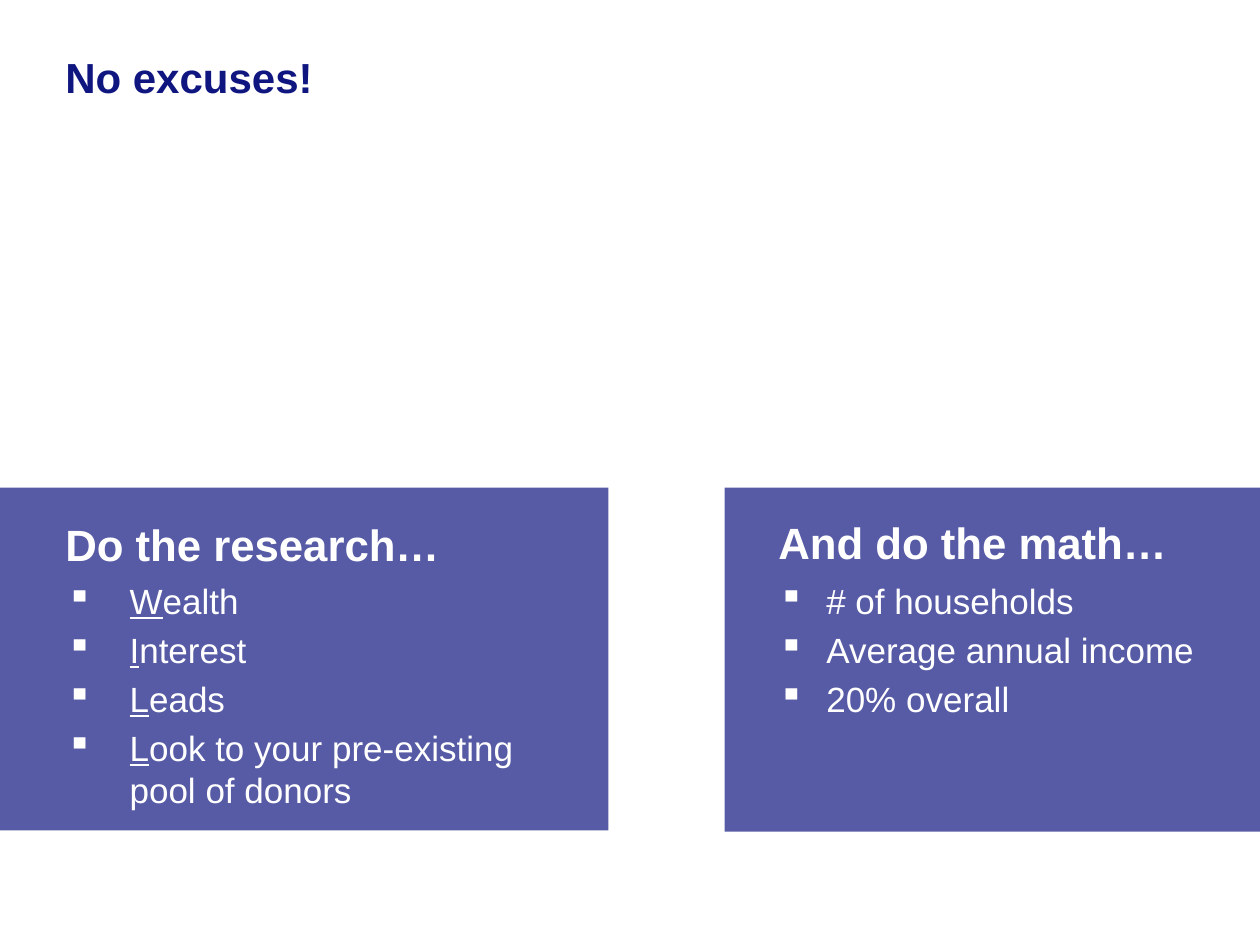
from lxml import etree
from pptx import Presentation
from pptx.dml.color import RGBColor
from pptx.enum.shapes import MSO_SHAPE
from pptx.enum.text import MSO_ANCHOR
from pptx.oxml.ns import qn
from pptx.util import Inches, Pt

RECT = MSO_SHAPE.RECTANGLE
TOP = MSO_ANCHOR.TOP
MIDDLE = MSO_ANCHOR.MIDDLE
NAVY = "10167F"
WHITE = "FFFFFF"


def tint(code):
    return RGBColor.from_string(code)


class Deck:
    font = "Arial"
    mark = "▪"

    def __init__(self, show):
        self.slide = show.slides.add_slide(show.slide_layouts[6])

    def panel(self, left, top, width, height):
        shape = self.slide.shapes.add_shape(
            RECT, Inches(left), Inches(top), Inches(width), Inches(height))
        shape.shadow.inherit = False
        shape.fill.solid()
        shape.fill.fore_color.rgb = tint(NAVY)
        shape.line.fill.background()
        color = shape.fill._xPr.find(qn("a:solidFill"))[0]
        etree.SubElement(color, qn("a:alpha"), val="70000")

    def box(self, left, top, width, height, anchor=TOP):
        shape = self.slide.shapes.add_textbox(
            Inches(left), Inches(top), Inches(width), Inches(height))
        frame = shape.text_frame
        frame.word_wrap = True
        frame.vertical_anchor = anchor
        return frame

    def style(self, run, size, color, bold=False):
        run.font.name = self.font
        run.font.size = Pt(size)
        run.font.bold = bold
        run.font.color.rgb = tint(color)

    def head(self, text, place, size, color, anchor=TOP):
        frame = self.box(*place, anchor)
        frame.text = text
        self.style(frame.paragraphs[0].runs[0], size, color, True)

    def bullets(self, items, place, indent, lead=False):
        frame = self.box(*place)
        for i, item in enumerate(items):
            para = frame.paragraphs[0] if i == 0 else frame.add_paragraph()
            props = para._p.get_or_add_pPr()
            props.set("marL", str(Inches(indent)))
            props.set("indent", str(-Inches(indent)))
            etree.SubElement(props, qn("a:buChar"), char=self.mark)
            if i:
                para.space_before = Pt(4)
            parts = (item[0], item[1:]) if lead else (item,)
            for j, part in enumerate(parts):
                run = para.add_run()
                run.text = part
                self.style(run, 20, WHITE)
                run.font.underline = lead and j == 0


def main():
    show = Presentation()
    show.slide_width = Inches(10)
    show.slide_height = Inches(7.5)
    deck = Deck(show)
    deck.panel(5.75, 3.87, 4.25, 2.73)
    deck.panel(0, 3.87, 4.83, 2.72)
    deck.head("No excuses!", (0.42, 0.3, 9, 0.62), 24, NAVY, MIDDLE)
    deck.head("Do the research…", (0.42, 4.06, 3.19, 0.5), 25, WHITE)
    deck.head("And do the math…", (6.08, 4.04, 3.29, 0.52), 25, WHITE)
    deck.bullets(
        ["Wealth", "Interest", "Leads",
         "Look to your pre-existing pool of donors"],
        (0.43, 4.55, 3.79, 1.99), 0.5, True)
    deck.bullets(
        ["# of households", "Average annual income", "20% overall"],
        (6.08, 4.55, 4.5, 1.25), 0.38)
    show.save("out.pptx")


if __name__ == "__main__":
    main()
